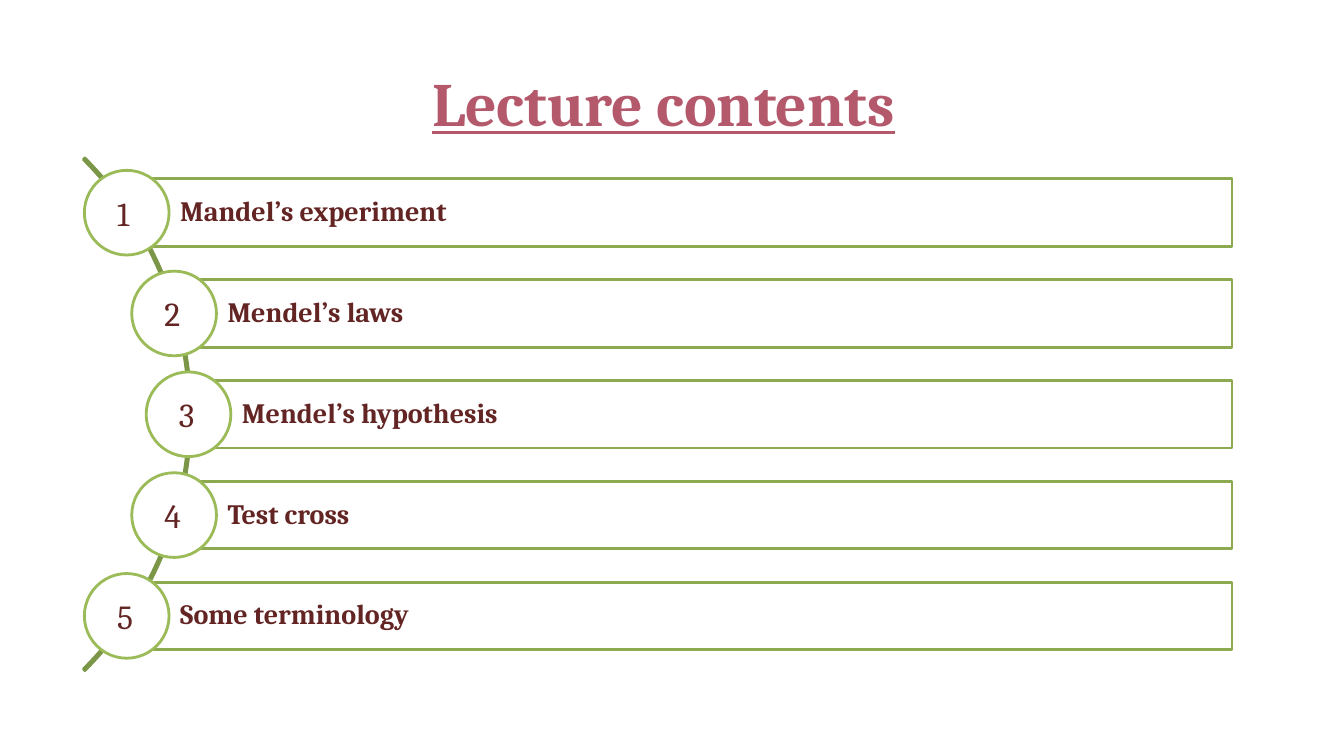
from dataclasses import dataclass
from math import sqrt

from pptx import Presentation
from pptx.dml.color import RGBColor as Rgb
from pptx.enum.shapes import MSO_SHAPE as Shape
from pptx.enum.text import MSO_ANCHOR as Anchor, MSO_AUTO_SIZE as AutoSize, PP_ALIGN as Align
from pptx.util import Inches, Pt


@dataclass(frozen=True)
class Theme:
    font: str = "Cambria"
    title_color: str = "B4586C"
    text_color: str = "632523"
    paper: str = "FFFFFF"
    arc_line: str = "7C9647"
    bar_line: str = "8DAA51"
    circle_line: str = "9BBB59"
    title_size: int = 44
    topic_size: int = 20
    number_size: int = 24
    line_width: int = 2


THEME = Theme()
TOPICS = ["Mandel’s experiment", "Mendel’s laws", "Mendel’s hypothesis",
          "Test cross", "Some terminology"]

# Grid in inches: rows one pitch apart, circles set along a curve
SLIDE_W, SLIDE_H = 13.33, 7.5
ROW_PITCH = 1.0
CURVE_X, CURVE_Y = -1.7, 4.11
ARC_SIZE = 7.19
CIRCLE_TRACK = 3.57
CIRCLE_SIZE, BAR_H, BAR_RIGHT = 0.84, 0.67, 12.22
NUMBER_W, NUMBER_H = 0.39, 0.5


def box(center_x, center_y, width, height):
    return [Inches(v) for v in (center_x - width / 2, center_y - height / 2, width, height)]


def apply(target, formats):
    for key, value in formats.items():
        setattr(target, key, value)


def write(frame, text, size, color, align=Align.LEFT, frame_format=None, **font_format):
    apply(frame, frame_format or {})
    paragraph = frame.paragraphs[0]
    paragraph.alignment = align
    run = paragraph.add_run()
    run.text = text
    apply(run.font, {"name": THEME.font, "size": Pt(size), **font_format})
    run.font.color.rgb = Rgb.from_string(color)
    return paragraph


def add_outlined(slide, kind, place, line_color, filled=True):
    outlined = slide.shapes.add_shape(kind, *place)
    outlined.shadow.inherit = False
    if filled:
        outlined.fill.solid()
        outlined.fill.fore_color.rgb = Rgb.from_string(THEME.paper)
    else:
        outlined.fill.background()
    outlined.line.color.rgb = Rgb.from_string(line_color)
    outlined.line.width = Pt(THEME.line_width)
    return outlined


def add_title(slide, text):
    title = slide.shapes.title
    apply(title, dict(zip(("left", "top", "width", "height"),
                          box(6.58, 1.01, 9.4, 1.06))))
    write(title.text_frame, text, THEME.title_size, THEME.title_color, Align.CENTER,
          {"vertical_anchor": Anchor.MIDDLE}, bold=True, underline=True)


def add_arc(slide):
    arc = add_outlined(slide, Shape.BLOCK_ARC, box(CURVE_X, CURVE_Y, ARC_SIZE, ARC_SIZE),
                       THEME.arc_line, filled=False)
    # Start angle, end angle and thickness
    for index, value in enumerate((189, 27, 0.003)):
        arc.adjustments[index] = value


def add_topic(slide, center_x, center_y, text):
    width = BAR_RIGHT - center_x
    bar = add_outlined(slide, Shape.RECTANGLE,
                       box(center_x + width / 2, center_y, width, BAR_H), THEME.bar_line)
    margin = Inches(0.06)
    paragraph = write(bar.text_frame, text, THEME.topic_size, THEME.text_color,
                      frame_format={"vertical_anchor": Anchor.MIDDLE, "word_wrap": True,
                                    "margin_left": Inches(0.53), "margin_right": margin,
                                    "margin_top": margin, "margin_bottom": margin},
                      bold=True)
    paragraph.line_spacing = 0.9
    add_outlined(slide, Shape.OVAL, box(center_x, center_y, CIRCLE_SIZE, CIRCLE_SIZE),
                 THEME.circle_line)


def add_number(slide, center_x, center_y, number):
    label = slide.shapes.add_textbox(*box(center_x, center_y, NUMBER_W, NUMBER_H))
    write(label.text_frame, str(number), THEME.number_size, THEME.text_color,
          frame_format={"word_wrap": False, "auto_size": AutoSize.SHAPE_TO_FIT_TEXT})


def main():
    deck = Presentation()
    apply(deck, {"slide_width": Inches(SLIDE_W), "slide_height": Inches(SLIDE_H)})
    slide = deck.slides.add_slide(deck.slide_layouts[5])

    add_title(slide, "Lecture contents")
    add_arc(slide)

    # Numbered topics along the curve
    for row, topic in enumerate(TOPICS):
        offset = (row - (len(TOPICS) - 1) / 2) * ROW_PITCH
        center_x = CURVE_X + sqrt(CIRCLE_TRACK ** 2 - offset ** 2)
        center_y = CURVE_Y + offset
        add_topic(slide, center_x, center_y, topic)
        add_number(slide, center_x, center_y, row + 1)

    deck.save("out.pptx")


if __name__ == "__main__":
    main()
